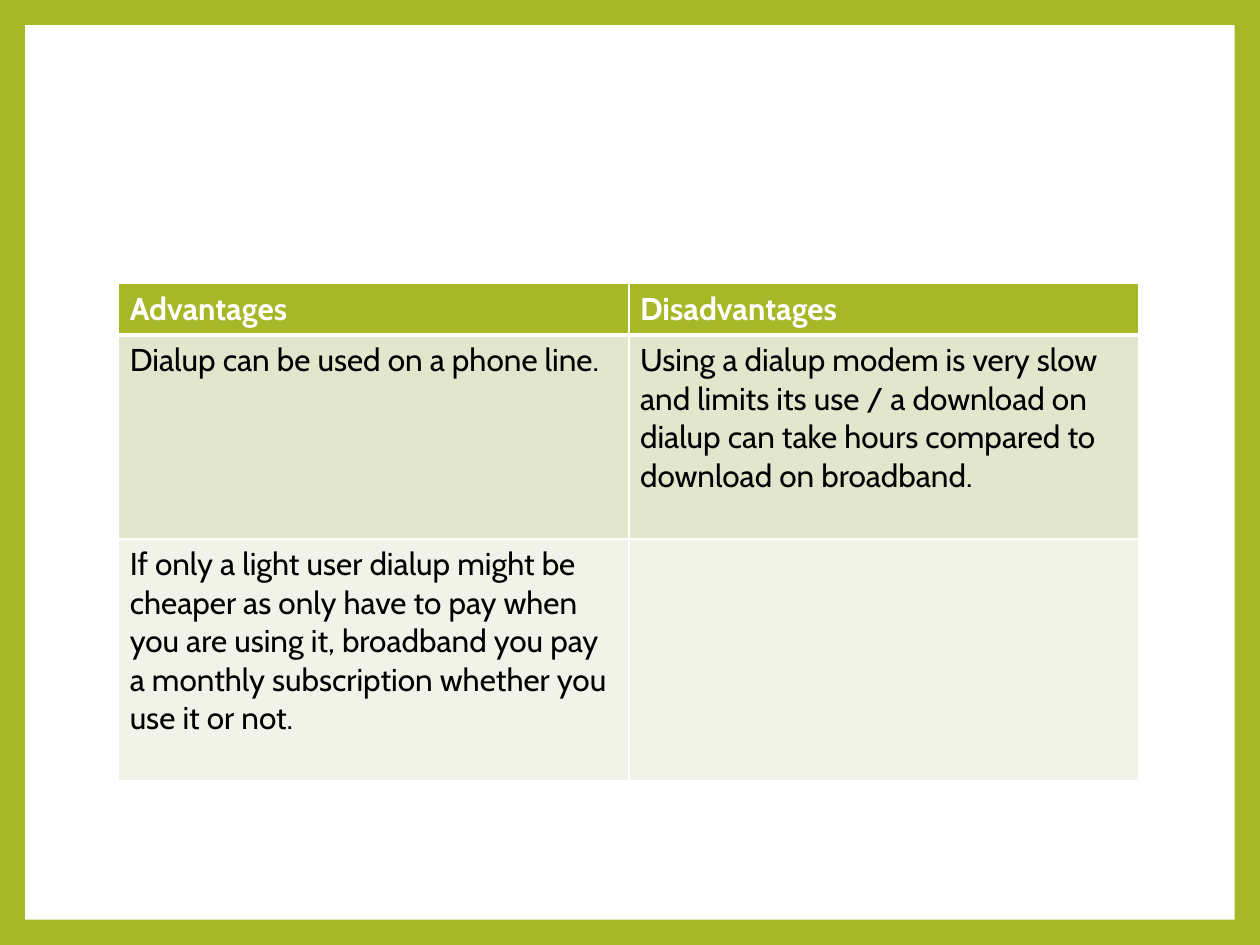
from dataclasses import dataclass

from lxml.etree import SubElement
from pptx import Presentation
from pptx.dml.color import RGBColor
from pptx.enum.shapes import MSO_SHAPE
from pptx.oxml.ns import qn
from pptx.util import Inches, Pt

GREEN = "A6B727"
WHITE = "FFFFFF"
BLACK = "000000"


@dataclass(frozen=True)
class TableRow:
    height: float
    texts: tuple[str, str]
    fill: str
    color: str = BLACK
    bold: bool = False
    top_border: float = 1
    bottom_border: float = 1


ROWS = [
    TableRow(0.41, ("Advantages", "Disadvantages"), GREEN, WHITE, True, bottom_border=3),
    TableRow(
        1.62,
        (
            "Dialup can be used on a phone line.",
            "Using a dialup modem is very slow and limits its use / a download on "
            "dialup can take hours compared to download on broadband.",
        ),
        "E1E6CD",
        top_border=3,
    ),
    TableRow(
        1.92,
        (
            "If only a light user dialup might be cheaper as only have to pay when you "
            "are using it, broadband you pay a monthly subscription whether you use it or not.",
            "",
        ),
        "F1F3E8",
    ),
]
COLUMN_WIDTH = 4.05


def paint(fill, color: str) -> None:
    fill.solid()
    fill.fore_color.rgb = RGBColor.from_string(color)


def add_borders(cell, row: TableRow) -> None:
    properties = cell._tc.get_or_add_tcPr()
    widths = {"L": 1, "R": 1, "T": row.top_border, "B": row.bottom_border}
    for side, width in widths.items():
        line = SubElement(properties, qn(f"a:ln{side}"), w=str(Pt(width)))
        solid = SubElement(line, qn("a:solidFill"))
        SubElement(solid, qn("a:srgbClr"), val=WHITE)


def fill_cell(cell, text: str, row: TableRow) -> None:
    add_borders(cell, row)
    paint(cell.fill, row.fill)
    cell.margin_left = cell.margin_right = Inches(0.09)
    cell.margin_top = cell.margin_bottom = Inches(0.05)
    cell.text_frame.text = text
    font = cell.text_frame.paragraphs[0].font
    for run in cell.text_frame.paragraphs[0].runs:
        font = run.font
    font.name = "Cabin"
    font.size = Pt(18)
    font.bold = row.bold
    paint(font.fill, row.color)


def add_comparison_table(slide) -> None:
    height = sum(row.height for row in ROWS)
    frame = slide.shapes.add_table(
        len(ROWS), 2, Inches(0.94), Inches(2.25), Inches(2 * COLUMN_WIDTH), Inches(height)
    )
    table = frame.table
    for column in table.columns:
        column.width = Inches(COLUMN_WIDTH)
    for row_index, row in enumerate(ROWS):
        table.rows[row_index].height = Inches(row.height)
        for column_index, text in enumerate(row.texts):
            fill_cell(table.cell(row_index, column_index), text, row)


def add_white_panel(slide) -> None:
    panel = slide.shapes.add_shape(
        MSO_SHAPE.RECTANGLE, Inches(0.2), Inches(0.2), Inches(9.6), Inches(7.1)
    )
    panel.shadow.inherit = False
    paint(panel.fill, WHITE)
    panel.line.fill.background()


def main() -> None:
    presentation = Presentation()
    presentation.slide_width = Inches(10)
    presentation.slide_height = Inches(7.5)
    slide = presentation.slides.add_slide(presentation.slide_layouts[6])
    paint(slide.background.fill, GREEN)
    add_white_panel(slide)
    add_comparison_table(slide)
    presentation.save("out.pptx")


if __name__ == "__main__":
    main()
